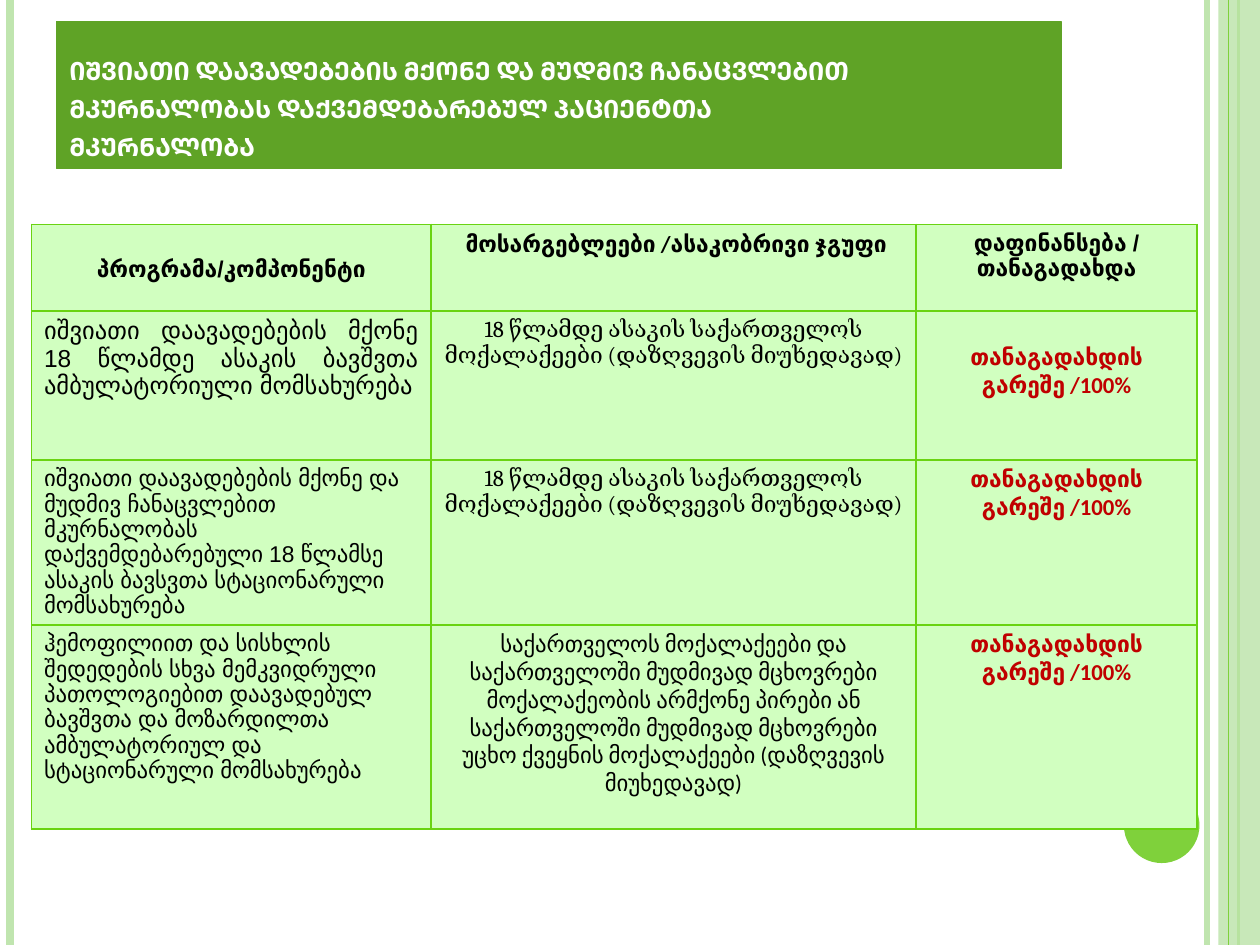
from lxml.etree import SubElement as Sub
from pptx import Presentation
from pptx.dml.color import RGBColor as RGB
from pptx.enum.shapes import MSO_CONNECTOR as Conn, MSO_SHAPE as Shape
from pptx.enum.text import MSO_ANCHOR as Anchor, PP_ALIGN as Align
from pptx.oxml.ns import qn
from pptx.util import Inches, Pt

COLORS = {"pale": "C0E5AF", "green": "7FD13B", "title": "5FA326", "cell": "D1FFC0",
          "edge": "6AD312", "text": "000000", "red": "C00000", "white": "FFFFFF"}

TITLE = ("იშვიათი დაავადებების მქონე და მუდმივ ჩანაცვლებით მკურნალობას "
         "დაქვემდებარებულ პაციენტთა\vმკურნალობა")
KIDS = "18 წლამდე ასაკის საქართველოს მოქალაქეები (დაზღვევის მიუხედავად)"
FREE = "თანაგადახდის გარეშე /100%"

# Formats of the kinds of cell: font, paragraph alignment, top margin
HEAD = {"name": "Arial", "bold": True}
BODY = {"name": "Arial", "align": Align.LEFT}
WHO = {"name": "Cambria"}
PAY = {"name": "Calibri", "bold": True, "color": "red"}
LOW = {"top": 0.26}

ROWS = [
    [("პროგრამა/კომპონენტი", HEAD | LOW),
     (" მოსარგებლეები /ასაკობრივი ჯგუფი", HEAD | {"name": "Calibri"}),
     ("დაფინანსება / თანაგადახდა", HEAD)],
    [("იშვიათი დაავადებების მქონე 18 წლამდე ასაკის ბავშვთა ამბულატორიული მომსახურება",
      BODY | {"size": 14, "align": Align.JUSTIFY}),
     (KIDS, WHO), (FREE, PAY | LOW)],
    [("იშვიათი დაავადებების მქონე და მუდმივ ჩანაცვლებით მკურნალობას "
      "დაქვემდებარებული 18 წლამსე ასაკის ბავსვთა სტაციონარული მომსახურება", BODY),
     (KIDS, WHO), (FREE, PAY)],
    [("ჰემოფილიით და სისხლის შედედების სხვა მემკვიდრული პათოლოგიებით დაავადებულ "
      "ბავშვთა და მოზარდილთა ამბულატორიულ და სტაციონარული მომსახურება", BODY),
     ("საქართველოს მოქალაქეები და საქართველოში მუდმივად მცხოვრები მოქალაქეობის "
      "არმქონე პირები ან საქართველოში მუდმივად მცხოვრები უცხო ქვეყნის მოქალაქეები "
      "(დაზღვევის მიუხედავად)", WHO | {"name": "Calibri"}),
     (FREE, PAY)],
]


def rgb(key):
    return RGB.from_string(COLORS[key])


def set_font(font, name, size, color="text", bold=False):
    values = {"name": name, "size": Pt(size), "bold": bold}
    for key, val in values.items():
        setattr(font, key, val)
    font.color.rgb = rgb(color)


def add_rule(slide, x, color, width):
    """Draw a full-height vertical line."""
    line = slide.shapes.add_connector(
        Conn.STRAIGHT, Inches(x), 0, Inches(x), Inches(7.5))
    line.line.color.rgb = rgb(color)
    line.line.width = Pt(width)
    Sub(line._element.spPr, qn("a:effectLst"))


def add_solid(slide, kind, box, color, alpha=100):
    item = slide.shapes.add_shape(kind, *map(Inches, box))
    item.shadow.inherit = False
    item.fill.solid()
    item.fill.fore_color.rgb = rgb(color)
    item.line.fill.background()
    if alpha < 100:
        tint = item._element.spPr.find(".//" + qn("a:srgbClr"))
        Sub(tint, qn("a:alpha"), val=str(alpha * 1000))


def add_frame(slide):
    """Draw the side stripes and the dot at the lower right."""
    for x, color, width in [(9.58, "pale", 3), (0.08, "pale", 4.5), (9.83, "green", 1.5)]:
        add_rule(slide, x, color, width)
    add_solid(slide, Shape.RECTANGLE, (9.67, 0, 0.33, 7.5), "pale", 87)
    add_rule(slide, 9.75, "green", 0.75)
    add_solid(slide, Shape.OVAL, (8.92, 6.25, 0.6, 0.6), "green")


def add_title(slide, box):
    title = slide.shapes.title
    for key, val in zip(("left", "top", "width", "height"), box):
        setattr(title, key, Inches(val))
    title.fill.solid()
    title.fill.fore_color.rgb = rgb("title")
    title.line.color.rgb = rgb("title")
    title.line.width = Pt(0.75)
    frame = title.text_frame
    frame.text = TITLE
    frame.word_wrap = True
    frame.vertical_anchor = Anchor.BOTTOM
    para = frame.paragraphs[0]
    para.alignment = Align.LEFT
    para.line_spacing = 1.0
    for run in para.runs:
        set_font(run.font, "Cambria", 18, "white", True)
        run._r.get_or_add_rPr().set("cap", "small")


def add_edges(cell):
    props = cell._tc.get_or_add_tcPr()
    for i, side in enumerate(("lnL", "lnR", "lnT", "lnB")):
        edge = props.makeelement(qn("a:" + side), {"w": str(Pt(1))})
        fill = Sub(edge, qn("a:solidFill"))
        Sub(fill, qn("a:srgbClr"), val=COLORS["edge"])
        props.insert(i, edge)


def fill_cell(cell, text, look):
    look = {"size": 13, "align": Align.CENTER, "top": 0.05} | look
    cell.fill.solid()
    cell.fill.fore_color.rgb = rgb("cell")
    cell.margin_top = Inches(look.pop("top"))
    cell.text = text
    para = cell.text_frame.paragraphs[0]
    para.alignment = look.pop("align")
    set_font(para.runs[0].font, **look)
    add_edges(cell)


def add_grid(slide, box):
    grid = slide.shapes.add_table(len(ROWS), 3, *map(Inches, box)).table
    for col, width in zip(grid.columns, (3.17, 3.85, 2.23)):
        col.width = Inches(width)
    for row, height, cells in zip(grid.rows, (0.69, 1.18, 1.31, 1.62), ROWS):
        row.height = Inches(height)
        for cell, (text, look) in zip(row.cells, cells):
            fill_cell(cell, text, look)


def main():
    deck = Presentation()
    deck.slide_width, deck.slide_height = Inches(10), Inches(7.5)
    slide = deck.slides.add_slide(deck.slide_layouts[5])
    add_frame(slide)
    add_title(slide, (0.45, 0.17, 7.97, 1.17))
    add_grid(slide, (0.25, 1.78, 9.25, 4.8))
    deck.save("out.pptx")


if __name__ == "__main__":
    main()
